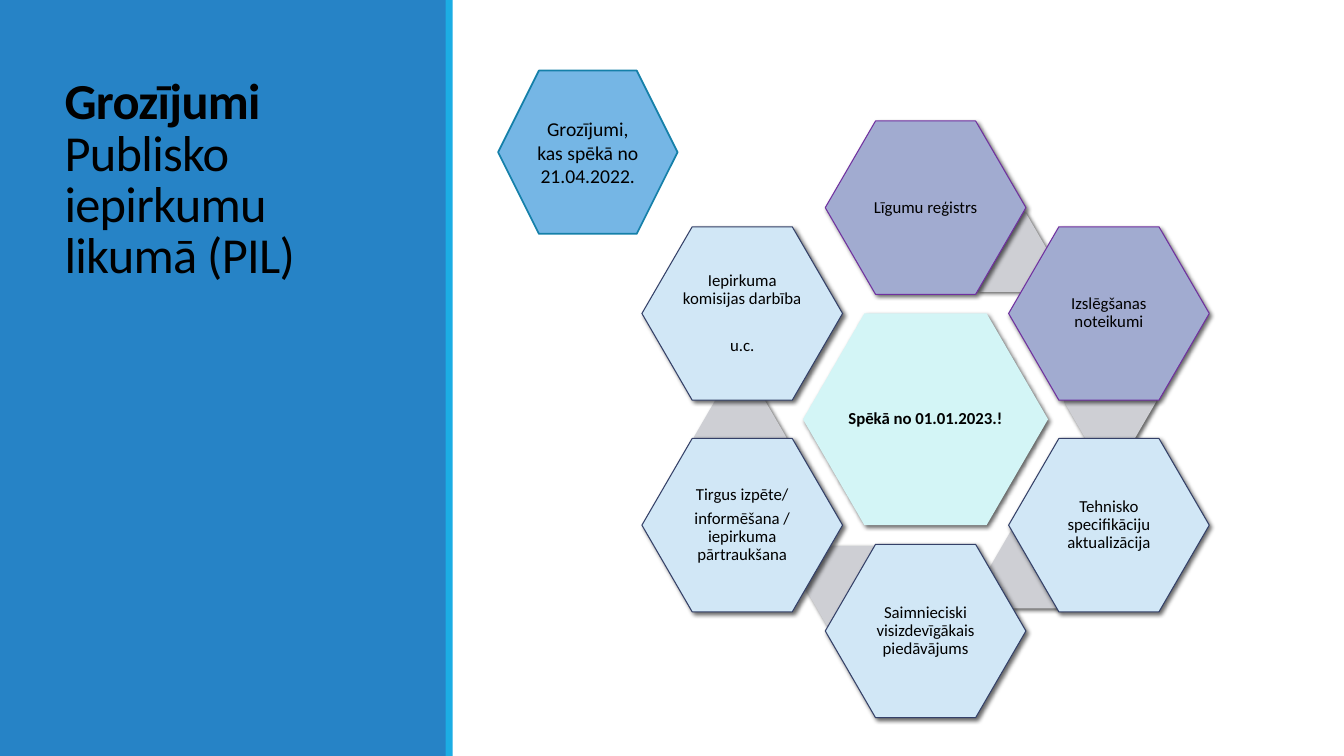
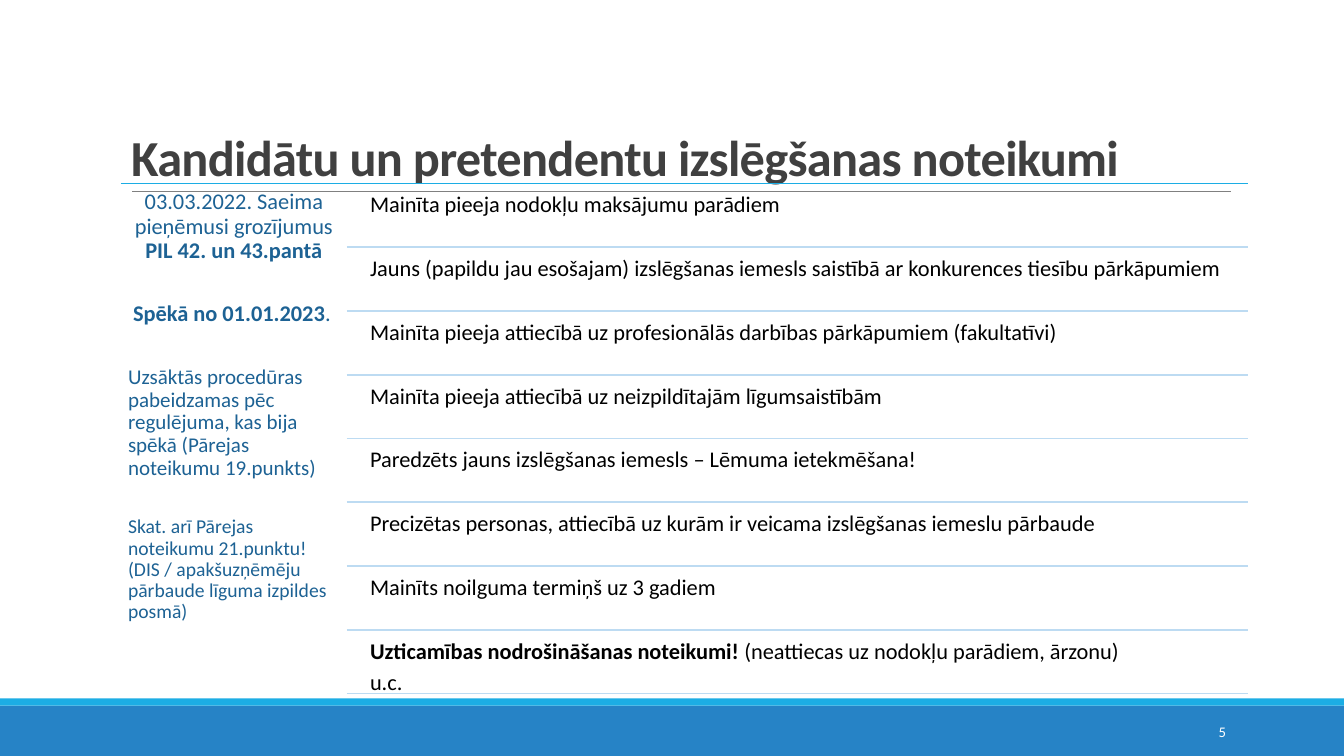
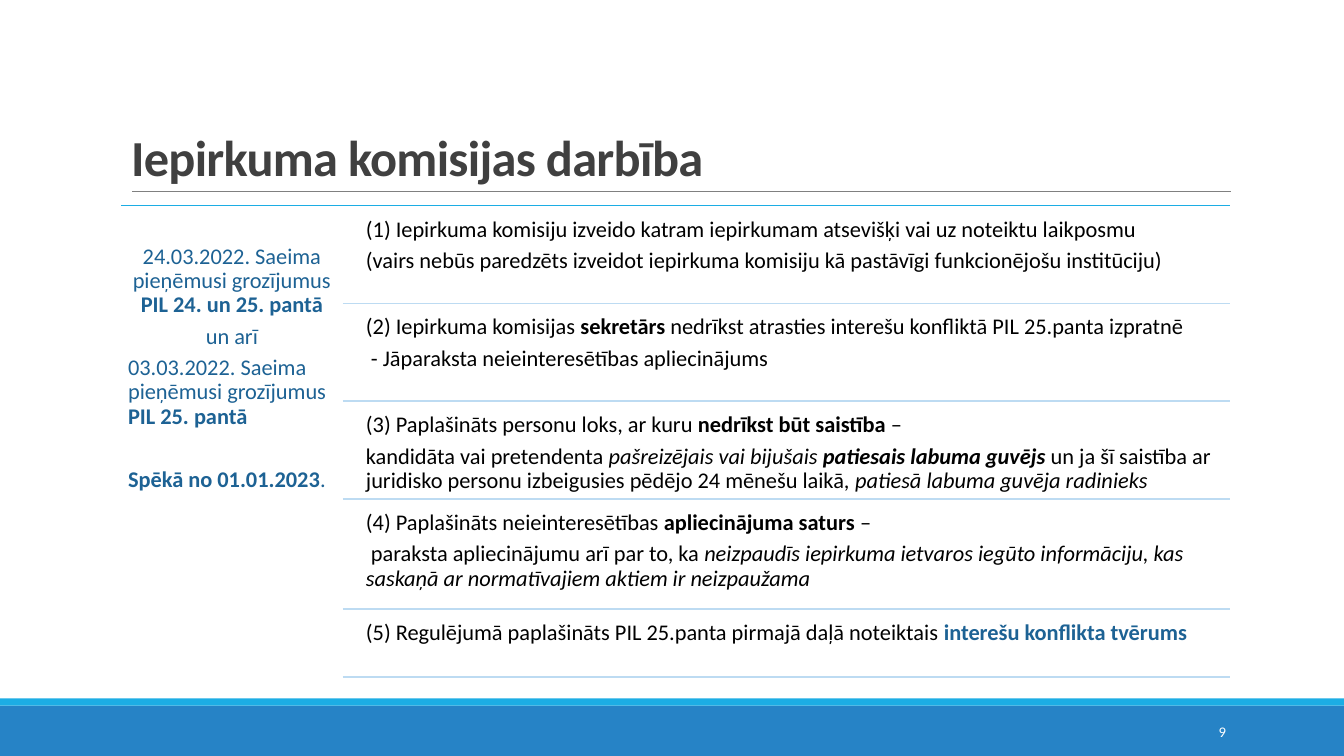
from math import cos, radians, sin

from pptx import Presentation
from pptx.dml.color import RGBColor
from pptx.enum import shapes, text
from pptx.oxml.ns import qn
from pptx.oxml.xmlchemy import OxmlElement
from pptx.util import Inches, Pt

# Shared look
FONT = "Calibri"
BLACK, WHITE, DARK, GREY = "000000", "FFFFFF", "404040", "808080"
BLUE, CYAN, NAVY, PALE_LINE = "2683C6", "1CADE4", "1D6294", "BDDBF2"
PALE_BLUE, VIOLET, MINT, SILVER = "D1E7F6", "A1ABD0", "D3F5F6", "CECFD4"
LEFT, CENTER, RIGHT = text.PP_ALIGN.LEFT, text.PP_ALIGN.CENTER, text.PP_ALIGN.RIGHT
TOP, MIDDLE, BOTTOM = (text.MSO_ANCHOR.TOP, text.MSO_ANCHOR.MIDDLE,
                       text.MSO_ANCHOR.BOTTOM)
RECT, HEXAGON = shapes.MSO_SHAPE.RECTANGLE, shapes.MSO_SHAPE.HEXAGON


def color(value):
    return RGBColor.from_string(value)


def node(parent, tag, **attributes):
    """Append an XML element to parent."""
    child = OxmlElement(tag)
    for name, value in attributes.items():
        child.set(name, str(value))
    parent.append(child)
    return child


def place(box, left, top, width, height):
    box.left, box.top = Inches(left), Inches(top)
    box.width, box.height = Inches(width), Inches(height)


# Text: a paragraph is a list of spans; a span is text or (text, "b"/"i" flags, colour)
def write_para(para, spans, size=16, ink=BLACK, align=LEFT, spacing=0.9,
               before=0, after=0.33):
    para.alignment, para.line_spacing = align, spacing
    para.space_before, para.space_after = Pt(before), Pt(round(size * after, 1))
    for item in [spans] if isinstance(spans, str) else spans:
        words, flags, tint = ((item,) if isinstance(item, str) else item) + ("", ink)[
            (0 if isinstance(item, str) else len(item) - 1):]
        if words == "\n":
            para.add_line_break()
            continue
        span = para.add_run()
        span.text = words
        font = span.font
        font.name, font.size, font.color.rgb = FONT, Pt(size), color(tint)
        font.bold, font.italic = "b" in flags, "i" in flags


def write(box, paras, anchor=TOP, inset=None, **style):
    """Fill a box; a paragraph may be (spans, own style)."""
    frame = box.text_frame
    frame.word_wrap, frame.auto_size = True, text.MSO_AUTO_SIZE.NONE
    frame.vertical_anchor = anchor
    if inset is not None:
        frame.margin_left = frame.margin_right = Inches(inset)
        frame.margin_top = frame.margin_bottom = Inches(inset)
    for number, item in enumerate(paras):
        spans, own = item if isinstance(item, tuple) else (item, {})
        para = frame.add_paragraph() if number else frame.paragraphs[0]
        write_para(para, spans, **{**style, **own})


def add_text(page, area, paras, **style):
    box = page.shapes.add_textbox(*map(Inches, area))
    write(box, paras, **style)
    return box


def add_title(page, spans, ink=DARK):
    write(page.shapes.title, [spans], anchor=BOTTOM, size=36, ink=ink,
          spacing=0.85, after=0)


# Drawing
def add_shape(page, kind, area, fill, line=None, width=0.75):
    box = page.shapes.add_shape(kind, *map(Inches, area))
    box.shadow.inherit = False
    box.fill.solid()
    box.fill.fore_color.rgb = color(fill)
    if line:
        box.line.color.rgb, box.line.width = color(line), Pt(width)
    else:
        box.line.fill.background()
    return box


def add_rule(page, left, right, y, ink, width=1.25):
    rule = page.shapes.add_connector(shapes.MSO_CONNECTOR.STRAIGHT, Inches(left),
                                     Inches(y), Inches(right), Inches(y))
    rule.line.color.rgb, rule.line.width = color(ink), Pt(width)
    node(rule.element.spPr, "a:effectLst")
    return rule


def add_hexagon(page, center, size, fill, line=None, paras=(), **style):
    """Shadowed hexagon around a centre point."""
    (x, y), (width, height) = center, size
    box = add_shape(page, HEXAGON, (x - width / 2, y - height / 2, width, height),
                    fill, line)
    box.adjustments[0] = 0.29
    shadow = node(box.element.spPr.find(qn("a:effectLst")), "a:outerShdw",
                  blurRad=Pt(3), dist=Pt(2), dir=45 * 60000, algn="tl",
                  rotWithShape=0)
    node(node(shadow, "a:srgbClr", val=BLACK), "a:alpha", val=60000)
    write(box, paras, anchor=MIDDLE, inset=0.02, size=12, align=CENTER, **style)


# Template: bands, rule, title and side text of the content slides
def set_up_layout(deck, layout):
    title_style = deck.slide_master.element.find(
        f".//{qn('p:titleStyle')}/{qn('a:lvl1pPr')}/{qn('a:defRPr')}")
    title_style.set("spc", "-50")
    place(layout.placeholders[0], 1.2, 0.31, 11, 1.59)
    list_style = layout.placeholders[1].element.find(f".//{qn('a:lstStyle')}")
    for level in list(list_style):
        list_style.remove(level)
    node(node(list_style, "a:lvl1pPr", marL=0, indent=0), "a:buNone")


def move_bands_to_layout(page):
    """Draw the shared parts on a page and hand them to its layout."""
    parts = [add_shape(page, RECT, (0, 7, 13.33, 0.5), BLUE),
             add_shape(page, RECT, (0, 6.93, 13.33, 0.07), CYAN),
             add_rule(page, 1.31, 12.21, 1.9, GREY, 0.5)]
    for number, part in enumerate(parts, 50):
        part.element.find(f".//{qn('p:cNvPr')}").set("id", str(number))
        page.slide_layout.shapes.element.append(part.element)


def add_content(page, title, number, side, side_area, right, edges, gap, rows):
    """Title, side text and rows of text that stand between rules."""
    add_title(page, [(title, "b")])
    body = page.placeholders[1]
    place(body, *side_area)
    write(body, side, inset=0.07, ink=NAVY)
    split = side_area[0] + side_area[2]
    add_rule(page, side_area[0], right, edges[0], CYAN)
    for top, bottom, paras in zip(edges, edges[1:], rows):
        add_text(page, (split + 0.16, top + gap, right - split - 0.16,
                        bottom - top - gap), paras, inset=0.07)
        add_rule(page, split, right, bottom, PALE_LINE)
    add_text(page, (10.83, 7.06, 1.43, 0.4), [number], anchor=MIDDLE, size=10.5,
             ink=WHITE, align=RIGHT, spacing=1, after=0)


# Slides
def build_overview(page):
    add_shape(page, RECT, (0, 0, 4.43, 7.5), BLUE)
    add_shape(page, RECT, (4.42, 0, 0.07, 7.5), CYAN)
    title = page.shapes.title
    place(title, 0.54, 0.57, 3.37, 2.3)
    page.shapes.element.append(title.element)
    add_title(page, [("Grozījumi ", "b"), "\n", "Publisko iepirkumu likumā (PIL)"],
              BLACK)

    middle_x, middle_y, radius = 9.18, 4.16, 2.1
    add_hexagon(page, (middle_x, middle_y), (2.43, 2.1), MINT,
                paras=[[("Spēkā no 01.01.2023.!", "b")]])
    topics = [
        ["Līgumu reģistrs"],
        ["Izslēgšanas noteikumi"],
        ["Tehnisko specifikāciju aktualizācija"],
        ["Saimnieciski visizdevīgākais piedāvājums"],
        ["Tirgus izpēte/", "informēšana / iepirkuma pārtraukšana"],
        ["Iepirkuma komisijas darbība", ("u.c.", {"before": 17})],
    ]
    links = [(9.94, 2.5), (11.01, 3.98), (10.27, 5.64), (8.43, 5.81), (7.34, 4.34)]
    for index, paras in enumerate(topics):
        if index < len(links):
            # The first link lies behind the first topic, and so on
            add_hexagon(page, links[index], (0.92, 0.79), SILVER)
        angle = radians(60 * index)
        center = (middle_x + radius * sin(angle), middle_y - radius * cos(angle))
        fill, line = (VIOLET, "7030A0") if index < 2 else (PALE_BLUE, "344068")
        add_hexagon(page, center, (1.99, 1.72), fill, line, paras)

    badge = add_shape(page, HEXAGON, (4.94, 0.7, 1.78, 1.62), "75B6E5", "1580A9", 1.25)
    write(badge, ["Grozījumi, kas spēkā no 21.04.2022."], anchor=MIDDLE, size=14,
          align=CENTER, spacing=1, after=0)


def build_exclusion(page):
    side = [
        (["03.03.2022. Saeima pieņēmusi grozījumus ", ("PIL 42. un 43.pantā", "b")],
         {"align": CENTER}),
        ([(" Spēkā no 01.01.2023", "b"), "."], {"before": 23}),
        ("Uzsāktās procedūras pabeidzamas pēc regulējuma, kas bija spēkā "
         "(Pārejas noteikumu 19.punkts)", {"size": 15, "before": 23}),
        ("Skat. arī Pārejas noteikumu 21.punktu! (DIS / apakšuzņēmēju pārbaude "
         "līguma izpildes posmā)", {"size": 14, "before": 21.5}),
    ]
    rows = [
        ["Mainīta pieeja nodokļu maksājumu parādiem"],
        ["Jauns (papildu jau esošajam) izslēgšanas iemesls saistībā ar konkurences "
         "tiesību pārkāpumiem"],
        ["Mainīta pieeja attiecībā uz profesionālās darbības pārkāpumiem (fakultatīvi)"],
        ["Mainīta pieeja attiecībā uz neizpildītajām līgumsaistībām"],
        ["Paredzēts jauns izslēgšanas iemesls – Lēmuma ietekmēšana!"],
        ["Precizētas personas, attiecībā uz kurām ir veicama izslēgšanas iemeslu "
         "pārbaude"],
        ["Mainīts noilguma termiņš uz 3 gadiem"],
        [[("Uzticamības nodrošināšanas noteikumi! ", "b"),
          "(neattiecas uz nodokļu parādiem, ārzonu)"], "u.c."],
    ]
    top, bottom = 1.82, 6.88
    step = (bottom - top) / len(rows)
    edges = [top + step * index for index in range(len(rows) + 1)]
    add_content(page, "Kandidātu un pretendentu izslēgšanas noteikumi", "5", side,
                (1.2, top, 2.24, 5.09), 12.38, edges, 0.03, rows)


def build_commission(page):
    side = [
        (["24.03.2022. Saeima pieņēmusi grozījumus ", ("PIL 24. un 25. pantā", "b")],
         {"align": CENTER}),
        ("un arī", {"align": CENTER}),
        ["03.03.2022. Saeima pieņēmusi grozījumus ", ("PIL 25. pantā", "b")],
        ([("Spēkā no 01.01.2023", "b"), "."], {"before": 23}),
    ]
    rows = [
        ["(1) Iepirkuma komisiju izveido katram iepirkumam atsevišķi vai uz noteiktu "
         "laikposmu",
         "(vairs nebūs paredzēts izveidot iepirkuma komisiju kā pastāvīgi "
         "funkcionējošu institūciju)"],
        [["(2) Iepirkuma komisijas ", ("sekretārs", "b"),
          " nedrīkst atrasties interešu konfliktā PIL 25.panta izpratnē"],
         " - Jāparaksta neieinteresētības apliecinājums"],
        [["(3) Paplašināts personu loks, ar kuru ", ("nedrīkst būt saistība ", "b"), "–"],
         ["kandidāta vai pretendenta ", ("pašreizējais vai bijušais ", "i"),
          ("patiesais labuma guvējs ", "bi"),
          "un ja šī saistība ar juridisko personu izbeigusies pēdējo 24 mēnešu laikā, ",
          ("patiesā labuma guvēja radinieks", "i")]],
        [["(4) Paplašināts neieinteresētības ", ("apliecinājuma saturs", "b"), " –"],
         [" paraksta apliecinājumu arī par to, ka ",
          ("neizpaudīs iepirkuma ietvaros iegūto informāciju, kas saskaņā ar "
           "normatīvajiem aktiem ir neizpaužama", "i")]],
        [["(5) Regulējumā paplašināts PIL 25.panta pirmajā daļā noteiktais ",
          ("interešu konflikta tvērums", "b", NAVY)]],
    ]
    add_content(page, "Iepirkuma komisijas darbība", "9", side, (1.2, 2.36, 2.2, 4.4),
                12.2, [2.04, 3.01, 3.98, 4.95, 6.04, 6.72], 0.05, rows)


def main():
    deck = Presentation()
    deck.slide_width, deck.slide_height = Inches(13.33), Inches(7.5)
    content, title_only = deck.slide_layouts[1], deck.slide_layouts[5]
    set_up_layout(deck, content)
    build_overview(deck.slides.add_slide(title_only))
    exclusion = deck.slides.add_slide(content)
    move_bands_to_layout(exclusion)
    build_exclusion(exclusion)
    build_commission(deck.slides.add_slide(content))
    deck.save("out.pptx")


if __name__ == "__main__":
    main()
